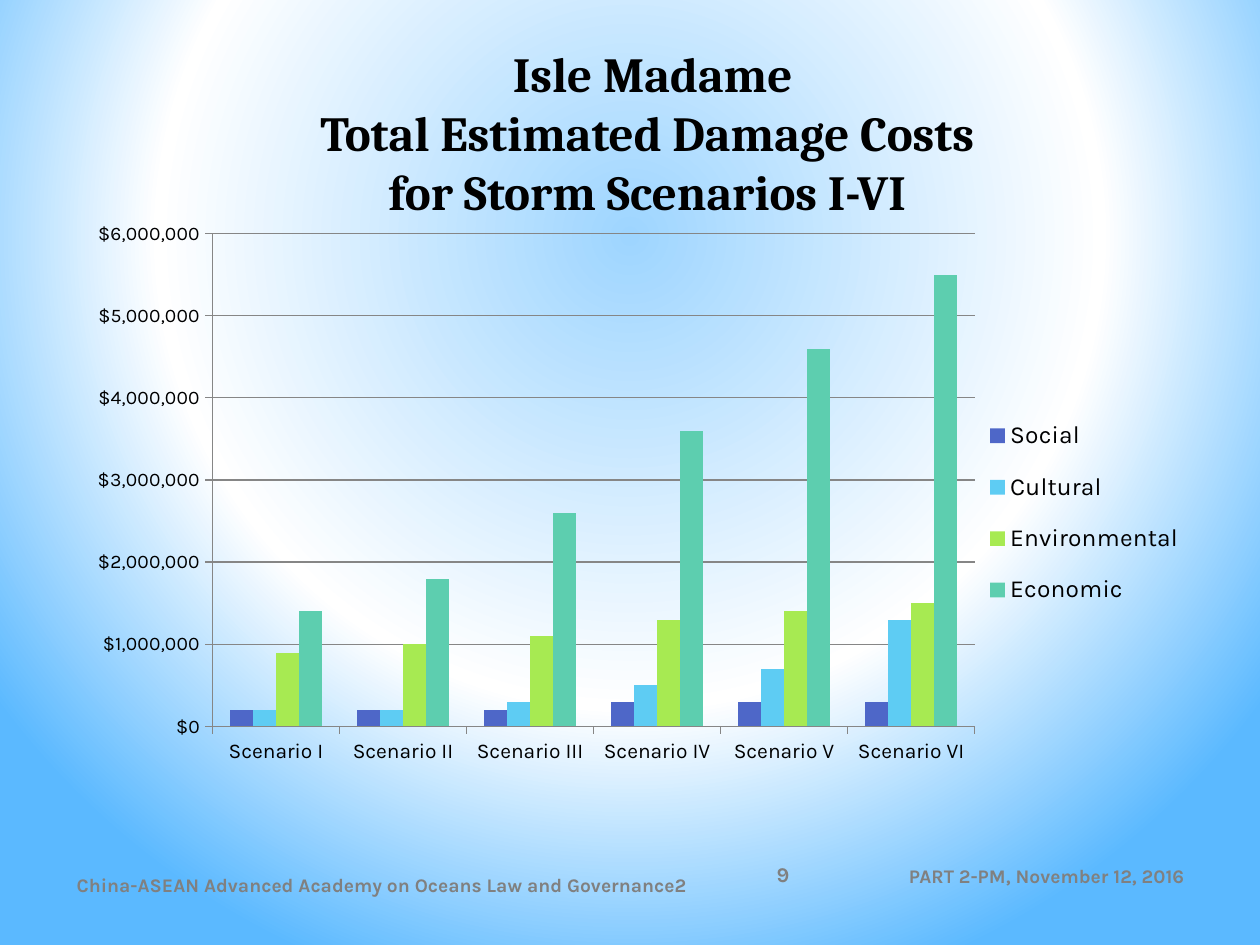
from dataclasses import dataclass

from pptx import Presentation
from pptx.chart.data import CategoryChartData
from pptx.dml.color import RGBColor
from pptx.enum.chart import XL_CHART_TYPE as ChartType
from pptx.enum.chart import XL_LEGEND_POSITION as LegendPosition
from pptx.enum.chart import XL_TICK_MARK as TickMark
from pptx.enum.text import MSO_ANCHOR as Anchor
from pptx.enum.text import MSO_AUTO_SIZE as AutoSize
from pptx.enum.text import PP_ALIGN as Align
from pptx.oxml import parse_xml
from pptx.oxml.ns import nsdecls
from pptx.util import Pt


@dataclass(frozen=True)
class Theme:
    heading_font: str = "Cambria"
    body_font: str = "Karla"
    black: str = "000000"
    grey: str = "808080"
    grid: str = "868686"
    title_size: int = 28
    legend_size: int = 14
    category_size: int = 12
    value_size: int = 11
    footer_size: int = 11
    number_size: int = 12
    backdrop: tuple = ((0, "9ED5FF"), (60, "FFFFFF"), (100, "5BB9FF"))
    series: tuple = ("4E67C8", "5ECCF3", "A7EA52", "5DCEAF")


THEME = Theme()
TITLE = ("Isle Madame", "Total Estimated Damage Costs ", "for Storm Scenarios I-VI ")
SCENARIOS = [f"Scenario {numeral}" for numeral in ("I", "II", "III", "IV", "V", "VI")]
DAMAGE_COSTS = {
    "Social": (200000, 200000, 200000, 300000, 300000, 300000),
    "Cultural": (200000, 200000, 300000, 500000, 700000, 1300000),
    "Environmental": (900000, 1000000, 1100000, 1300000, 1400000, 1500000),
    "Economic": (1400000, 1800000, 2600000, 3600000, 4600000, 5500000),
}
CURRENCY = '"$"#,##0;[Red]\\-"$"#,##0'


def style_font(font, size, color=THEME.black, name=THEME.body_font, bold=False):
    font.size = Pt(size)
    font.name = name
    font.bold = bold
    font.color.rgb = RGBColor.from_string(color)


def write_text(box, lines, align=Align.LEFT, **font_format):
    frame = box.text_frame
    frame.word_wrap = True
    frame.auto_size = AutoSize.NONE
    frame.vertical_anchor = Anchor.MIDDLE
    for index, line in enumerate(lines):
        para = frame.paragraphs[0] if index == 0 else frame.add_paragraph()
        para.alignment = align
        span = para.add_run()
        span.text = line
        style_font(span.font, bold=True, **font_format)


def paint_background(page):
    fill = page.background.fill
    fill.solid()
    stops = "".join(
        f'<a:gs pos="{position * 1000}"><a:srgbClr val="{color}"/></a:gs>'
        for position, color in THEME.backdrop
    )
    gradient = parse_xml(
        f'<a:gradFill {nsdecls("a")} rotWithShape="1"><a:gsLst>{stops}</a:gsLst>'
        '<a:path path="circle"><a:fillToRect l="20000" t="10000" r="20000" b="60000"/>'
        "</a:path></a:gradFill>"
    )
    solid = page.element.xpath("./p:cSld/p:bg/p:bgPr/a:solidFill")[0]
    solid.getparent().replace(solid, gradient)


def add_title(page):
    title = page.shapes.title
    title.left, title.top, title.width, title.height = map(Pt, (76.3, 20.9, 593.3, 108.7))
    write_text(title, TITLE, Align.CENTER, size=THEME.title_size,
               color=THEME.black, name=THEME.heading_font)


def add_footer(page, text, left, top, width, align, size=THEME.footer_size):
    box = page.shapes.add_textbox(Pt(left), Pt(top), Pt(width), Pt(28.8))
    write_text(box, [text], align, size=size, color=THEME.grey)


def manual_layout(left, top, width, height, inner=False):
    target = '<c:layoutTarget val="inner"/>' if inner else ""
    edges = "".join(
        f'<c:{edge} val="{value}"/>'
        for edge, value in (("xMode", "edge"), ("yMode", "edge"), ("x", left),
                            ("y", top), ("w", width), ("h", height))
    )
    return parse_xml(
        f'<c:layout {nsdecls("c")}><c:manualLayout>{target}{edges}'
        "</c:manualLayout></c:layout>"
    )


def place_chart_parts(chart):
    plot_area = chart.element.xpath(".//c:plotArea")[0]
    for layout in chart.element.xpath(".//c:plotArea/c:layout | .//c:legend/c:layout"):
        layout.getparent().remove(layout)
    plot_area.insert(0, manual_layout(0.152, 0.044, 0.654, 0.734, inner=True))
    legend_position = chart.element.xpath(".//c:legend/c:legendPos")[0]
    legend_position.addnext(manual_layout(0.81, 0.29, 0.18, 0.34))


def style_axis(axis, size):
    axis.major_tick_mark = TickMark.OUTSIDE
    axis.minor_tick_mark = TickMark.NONE
    style_line(axis.format.line)
    style_font(axis.tick_labels.font, size)


def style_line(line):
    line.width = Pt(0.75)
    line.color.rgb = RGBColor.from_string(THEME.grid)


def add_damage_chart(page):
    data = CategoryChartData(number_format=CURRENCY)
    data.categories = SCENARIOS
    for name, costs in DAMAGE_COSTS.items():
        data.add_series(name, costs)
    chart = page.shapes.add_chart(ChartType.COLUMN_CLUSTERED, Pt(20.2), Pt(116.6),
                                  Pt(666), Pt(383.8), data).chart
    chart.has_title = False
    style_font(chart.font, 10)

    plot = chart.plots[0]
    plot.gap_width = 150
    plot.overlap = 0
    plot.vary_by_categories = False
    for series, color in zip(plot.series, THEME.series):
        series.invert_if_negative = False
        series.format.fill.solid()
        series.format.fill.fore_color.rgb = RGBColor.from_string(color)

    style_axis(chart.category_axis, THEME.category_size)
    values = chart.value_axis
    style_axis(values, THEME.value_size)
    values.minimum_scale, values.maximum_scale = 0, 6000000
    values.major_unit = 1000000
    values.has_major_gridlines = True
    style_line(values.major_gridlines.format.line)
    values.tick_labels.number_format = CURRENCY
    values.tick_labels.number_format_is_linked = False

    chart.has_legend = True
    chart.legend.position = LegendPosition.RIGHT
    chart.legend.include_in_layout = False
    style_font(chart.legend.font, THEME.legend_size)
    place_chart_parts(chart)


def main():
    deck = Presentation()
    deck.slide_width, deck.slide_height = Pt(720), Pt(540)
    page = deck.slides.add_slide(deck.slide_layouts[5])
    paint_background(page)
    add_footer(page, "PART 2-PM, November 12, 2016", 486, 486, 198, Align.RIGHT)
    add_footer(page, "China-ASEAN Advanced Academy on Oceans Law and Governance2",
               36.7, 491, 652.3, Align.LEFT)
    add_footer(page, "9", 422.6, 485.3, 49.7, Align.CENTER, THEME.number_size)
    add_damage_chart(page)
    add_title(page)
    deck.save("out.pptx")


if __name__ == "__main__":
    main()
